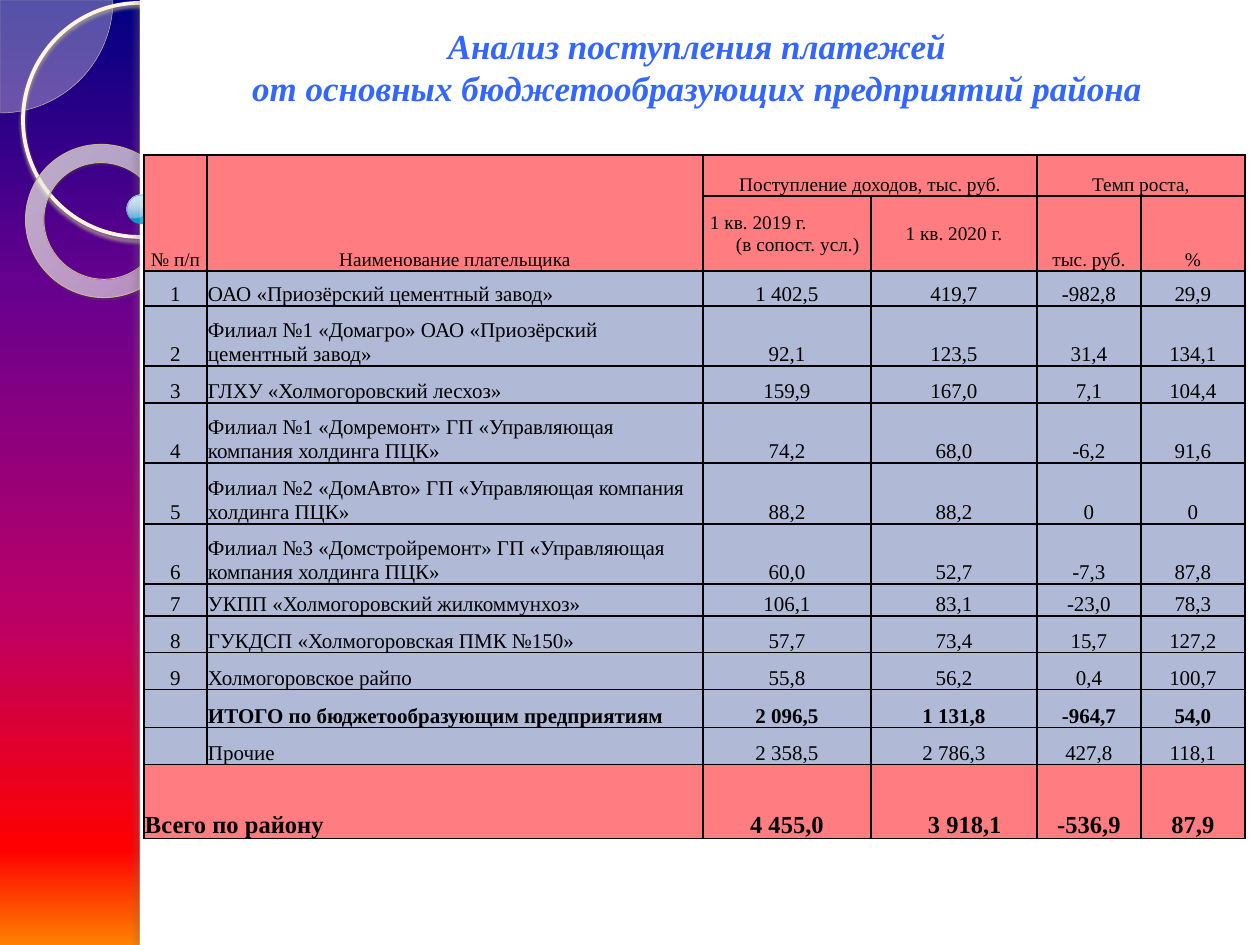
from dataclasses import dataclass

from lxml.etree import SubElement
from pptx import Presentation
from pptx.dml.color import RGBColor
from pptx.enum.shapes import MSO_SHAPE
from pptx.enum.text import MSO_ANCHOR, PP_ALIGN
from pptx.oxml.ns import qn
from pptx.util import Emu, Pt

PX = 914400 / 126


@dataclass(frozen=True)
class Theme:
    """Colours, font and type sizes of the slide."""

    font: str = "Times New Roman"
    title: str = "3366FF"
    ink: str = "000000"
    paper: str = "FFFFFF"
    accent: str = "FF7C80"
    body: str = "B0BAD7"
    title_size: int = 20
    head_size: int = 11
    body_size: int = 12
    total_size: int = 14
    sky: tuple = ((0, "000082"), (30, "66008F"), (65, "BA0066"), (90, "FF0000"), (100, "FF8200"))
    ring: tuple = ((0, "FFFCF6", 70), (70, "FFFEFB", 55), (100, "F0D28E", 60))
    ball: tuple = ((0, "DAF4FF", 95), (50, "C3E3F0", 90), (95, "6BC7E8", 88), (100, "00ABD5", 85))


THEME = Theme()
COLUMNS = (63, 496, 168, 166, 104, 104)
ROWS = (41, 75, 35, 60, 37, 60, 61, 60, 32, 37, 37, 38, 37, 74)
GROUPS = ("№ п/п", "Наименование плательщика", "Поступление доходов, тыс. руб.", "", "Темп роста,", "")
PERIODS = ("", "", "1 кв. 2019 г.\t(в сопост. усл.)", "1 кв. 2020 г.", "тыс. руб.", "%")
PAYERS = (
    ("1", "ОАО «Приозёрский цементный завод»", "1 402,5", "419,7", "-982,8", "29,9"),
    ("2", "Филиал №1 «Домагро» ОАО «Приозёрский цементный завод»", "92,1", "123,5", "31,4", "134,1"),
    ("3", "ГЛХУ «Холмогоровский лесхоз»", "159,9", "167,0", "7,1", "104,4"),
    ("4", "Филиал №1 «Домремонт» ГП «Управляющая компания холдинга ПЦК»", "74,2", "68,0", "-6,2", "91,6"),
    ("5", "Филиал №2 «ДомАвто» ГП «Управляющая компания холдинга ПЦК»", "88,2", "88,2", "0", "0"),
    ("6", "Филиал №3 «Домстройремонт» ГП «Управляющая компания холдинга ПЦК»", "60,0", "52,7", "-7,3", "87,8"),
    ("7", "УКПП «Холмогоровский жилкоммунхоз»", "106,1", "83,1", "-23,0", "78,3"),
    ("8", "ГУКДСП «Холмогоровская ПМК №150»", "57,7", "73,4", "15,7", "127,2"),
    ("9", "Холмогоровское райпо", "55,8", "56,2", "0,4", "100,7"),
)
SUBTOTAL = ("", "ИТОГО по бюджетообразующим предприятиям", "2 096,5", "1 131,8", "-964,7", "54,0")
OTHERS = ("", "Прочие", "2 358,5", "2 786,3", "427,8", "118,1")
TOTAL = ("Всего по району", "", "4 455,0", "3 918,1", "-536,9", "87,9")


def px(value):
    """Turn pixels into EMU."""
    return Emu(round(value * PX))


def add_color(parent, color, alpha=100):
    """Append a colour with its opacity to an XML element."""
    node = SubElement(parent, qn("a:srgbClr"), val=color)
    if alpha < 100:
        SubElement(node, qn("a:alpha"), val=str(alpha * 1000))


def set_gradient(fill, owner, stops, circle=None):
    """Fill with a vertical gradient, or a circular one around a given rectangle."""
    fill.gradient()
    gradient = owner.find(".//" + qn("a:gradFill"))
    for child in list(gradient):
        gradient.remove(child)
    stop_list = SubElement(gradient, qn("a:gsLst"))
    for position, *color in stops:
        add_color(SubElement(stop_list, qn("a:gs"), pos=str(position * 1000)), *color)
    if circle:
        center = SubElement(gradient, qn("a:path"), path="circle")
        sides = {side: str(value * 1000) for side, value in zip("ltrb", circle)}
        SubElement(center, qn("a:fillToRect"), sides)
    else:
        SubElement(gradient, qn("a:lin"), ang="5400000", scaled="0")


def add_shadow(shape, color, alpha, blur, distance, angle):
    """Give a shape an outer shadow."""
    effects = shape._element.spPr.find(qn("a:effectLst"))
    shadow = SubElement(effects, qn("a:outerShdw"), blurRad=str(Pt(blur)), dist=str(Pt(distance)),
                        dir=str(angle * 60000), algn="tl", rotWithShape="0")
    add_color(shadow, color, alpha)


def add_shape(slide, kind, box, fill=None, alpha=100, line=None, width=1, adjust=(), shadow=None):
    """Add a preset shape with a plain fill, an outline and an optional shadow."""
    shape = slide.shapes.add_shape(kind, *map(px, box))
    shape.shadow.inherit = False
    for index, value in enumerate(adjust):
        shape.adjustments[index] = value
    if fill:
        shape.fill.solid()
        shape.fill.fore_color.rgb = RGBColor.from_string(fill)
        solid = shape._element.spPr.find(qn("a:solidFill"))
        solid.clear()
        add_color(solid, fill, alpha)
    else:
        shape.fill.background()
    if line:
        shape.line.color.rgb = RGBColor.from_string(line)
        shape.line.width = Pt(width)
    else:
        shape.line.fill.background()
    if shadow:
        add_shadow(shape, *shadow)
    return shape


def write(text_frame, text, size, color=THEME.ink, bold=False, italic=False,
          align=PP_ALIGN.CENTER, anchor=MSO_ANCHOR.BOTTOM):
    """Write one formatted paragraph and return it."""
    text_frame.word_wrap = True
    text_frame.vertical_anchor = anchor
    paragraph = text_frame.paragraphs[0]
    paragraph.text = text
    paragraph.alignment = align
    for run in paragraph.runs:
        font = run.font
        font.name, font.size, font.bold, font.italic = THEME.font, Pt(size), bold, italic
        font.color.rgb = RGBColor.from_string(color)
    for line_break in paragraph._p.findall(qn("a:br")):
        SubElement(line_break, qn("a:rPr"), sz=str(size * 100))
    if not text:
        SubElement(paragraph._p, qn("a:endParaRPr"), sz=str(size * 100))
    return paragraph


def indent(paragraph, left, first=0, tab=None):
    """Set the left margin, first-line indent and tab stop of a paragraph."""
    properties = paragraph._p.get_or_add_pPr()
    properties.set("marL", str(px(left)))
    properties.set("indent", str(px(first)))
    if tab:
        tabs = SubElement(properties, qn("a:tabLst"))
        SubElement(tabs, qn("a:tab"), pos=str(px(tab)), algn="l")


def style_cell(cell, text, fill, **text_format):
    """Set the borders, fill, margins and text of a table cell."""
    properties = cell._tc.get_or_add_tcPr()
    for side in ("lnL", "lnR", "lnT", "lnB"):
        border = SubElement(properties, qn("a:" + side), w=str(Pt(1)))
        add_color(SubElement(border, qn("a:solidFill")), THEME.ink)
    cell.fill.solid()
    cell.fill.fore_color.rgb = RGBColor.from_string(fill)
    cell.margin_left = cell.margin_right = cell.margin_top = px(1)
    cell.margin_bottom = 0
    anchor = text_format.pop("anchor", MSO_ANCHOR.BOTTOM)
    paragraph = write(cell.text_frame, text, anchor=anchor, **text_format)
    cell.vertical_anchor = anchor
    return paragraph


def add_decoration(slide):
    """Draw the coloured side strip with its circles and the white panel."""
    set_gradient(slide.background.fill, slide._element, THEME.sky)
    add_shape(slide, MSO_SHAPE.PIE, (-113, -113, 226, 226), "FEFAF4", 33, "D3C39F", 0.25, (0, 54))
    add_shape(slide, MSO_SHAPE.OVAL, (23, 3, 234, 234), line="FFF5DE", width=2.15,
              shadow=("B0A68F", 85, 2, 2, 90))
    ring = add_shape(slide, MSO_SHAPE.DONUT, (25, 145, 155, 152), line="C7B893", width=0.58,
                     adjust=(0.12,), shadow=("5A5444", 35, 1, 1.2, 75))
    ring.rotation = 38.6
    set_gradient(ring.fill, ring._element, THEME.ring, (-408, -50, 508, 150))
    add_shape(slide, MSO_SHAPE.RECTANGLE, (140, 0, 1120, 945), THEME.paper)
    add_shape(slide, MSO_SHAPE.RECTANGLE, (140, 0, 10, 945), THEME.paper,
              shadow=("736F63", 25, 3, 3, 180))
    ball = add_shape(slide, MSO_SHAPE.OVAL, (127, 195, 29, 29), line="308EA5", width=0.16)
    set_gradient(ball.fill, ball._element, THEME.ball, (25, 12, 75, 88))


def add_title(slide, text):
    """Place the title above the panel."""
    title = slide.shapes.title
    title.left, title.top, title.width, title.height = map(px, (134, 16, 1126, 100))
    write(title.text_frame, text, THEME.title_size, THEME.title, True, True, anchor=MSO_ANCHOR.MIDDLE)
    slide.shapes._spTree.append(title._element)


def add_payments_table(slide):
    """Build the table of payments by payer."""
    rows = (GROUPS, PERIODS, *PAYERS, SUBTOTAL, OTHERS, TOTAL)
    last = len(rows) - 1
    frame = slide.shapes.add_table(len(rows), len(COLUMNS), *map(px, (144, 155, sum(COLUMNS), sum(ROWS))))
    table = frame.table
    table.first_row = table.horz_banding = False
    for column, width in zip(table.columns, COLUMNS):
        column.width = px(width)
    for row, height in zip(table.rows, ROWS):
        row.height = px(height)
    for r, values in enumerate(rows):
        size = THEME.head_size if r < 2 else THEME.total_size if r == last else THEME.body_size
        fill = THEME.accent if r < 2 or r == last else THEME.body
        for c, text in enumerate(values):
            named = (c == 1 and r > 1) or (c == 0 and r == last)
            period = r == 1 and c in (2, 3)
            style_cell(table.cell(r, c), text, fill, size=size, bold=values in (SUBTOTAL, TOTAL),
                       align=PP_ALIGN.LEFT if named else PP_ALIGN.CENTER,
                       anchor=MSO_ANCHOR.MIDDLE if period else MSO_ANCHOR.BOTTOM)
    for r, c, left, first, tab in ((1, 2, 32, -26, 151), (last, 3, 56, 0, None)):
        paragraph = table.cell(r, c).text_frame.paragraphs[0]
        paragraph.alignment = PP_ALIGN.LEFT
        indent(paragraph, left, first, tab)
    for start, end in (((0, 0), (1, 0)), ((0, 1), (1, 1)), ((0, 2), (0, 3)), ((0, 4), (0, 5)),
                       ((last, 0), (last, 1))):
        table.cell(*start).merge(table.cell(*end))


def main():
    """Build the slide and save it."""
    presentation = Presentation()
    presentation.slide_width, presentation.slide_height = px(1260), px(945)
    slide = presentation.slides.add_slide(presentation.slide_layouts[5])
    add_decoration(slide)
    add_title(slide, "Анализ поступления платежей\vот основных бюджетообразующих предприятий района")
    add_payments_table(slide)
    presentation.save("out.pptx")


if __name__ == "__main__":
    main()
